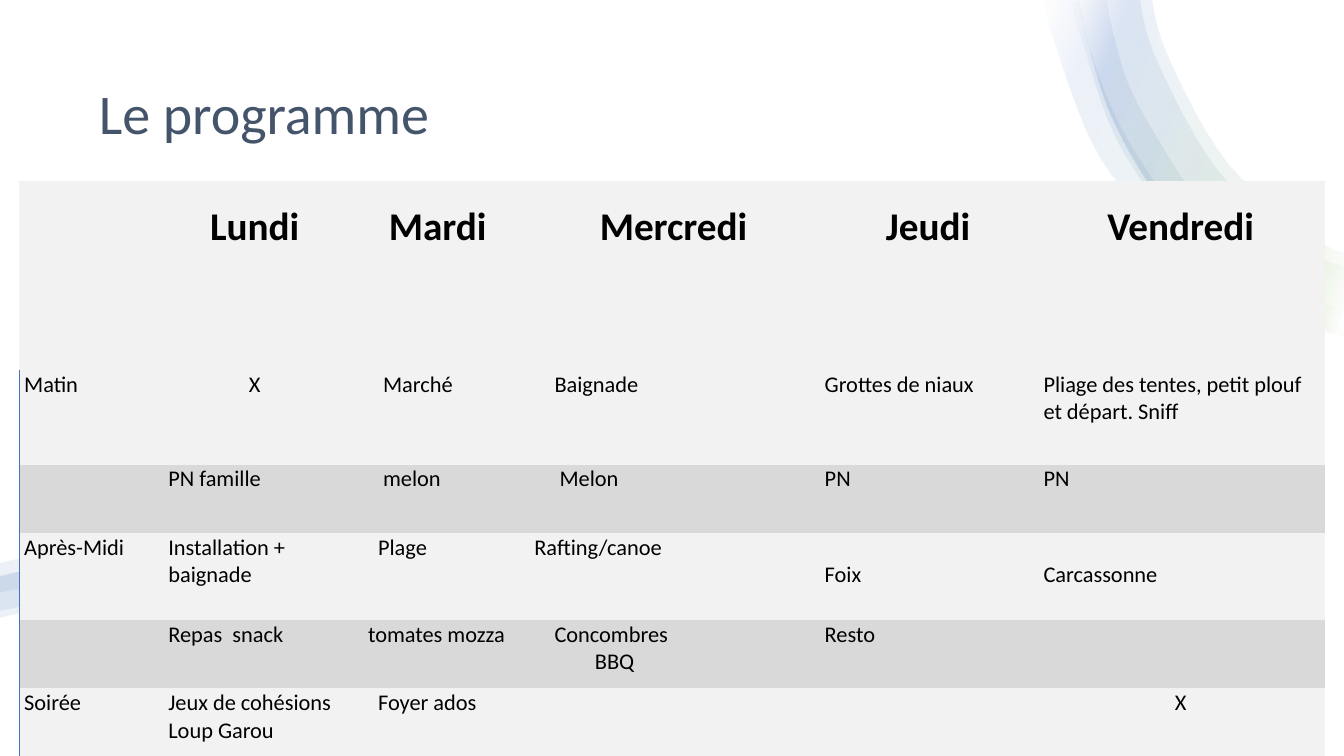
from dataclasses import dataclass

from lxml.etree import SubElement
from pptx import Presentation
from pptx.dml.color import RGBColor as RGB
from pptx.enum.text import MSO_ANCHOR as ANCHOR, PP_ALIGN as ALIGN
from pptx.oxml import parse_xml
from pptx.oxml.ns import nsdecls, qn
from pptx.util import Inches, Pt


@dataclass(frozen=True)
class Theme:
    font: str = "Calibri"
    title: str = "44546A"
    text: str = "000000"
    light: str = "F2F2F2"
    dark: str = "D9D9D9"
    border: str = "4472C4"
    title_size: int = 40
    head_size: int = 28
    body_size: int = 16
    stops: tuple = ((2, "FFFFFF"), (16, "70AD47"), (85, "4472C4"), (100, "FFFFFF"))
    opacity: int = 10


T = Theme()
TITLE = "Le programme"
DAYS = ["", "Lundi", "Mardi", "Mercredi", "Jeudi", "Vendredi"]
PROGRAMME = [
    ["Matin", "X", "Marché", "Baignade", "Grottes de niaux",
     "Pliage des tentes, petit plouf et départ. Sniff"],
    ["", "PN famille", "melon", "Melon", "PN", "PN"],
    ["Après-Midi", "Installation + baignade", "Plage", "Rafting/canoe", "Foix", "Carcassonne"],
    ["", "Repas  snack", "tomates mozza", "Concombres\nBBQ", "Resto", ""],
    ["Soirée", "Jeux de cohésions\nLoup Garou", "Foyer ados", "", "", "X"],
]
INDENTS = {"Marché": 0.3, "Baignade": 0.2, "melon": 0.3, "Melon": 0.25, "Plage": 0.25,
           "tomates mozza": 0.15, "Concombres": 0.2, "BBQ": 0.6, "Foyer ados": 0.25}
LOWERED = {"Foix", "Carcassonne"}
COLS = [1.43, 1.83, 1.8, 2.88, 2.17, 2.84]
ROWS = [0.8, 1.07, 0.94, 0.68, 0.86, 0.68, 0.81]
TABLE_AT = (0.19, 1.8)
NO_STYLE = "{2D5ABB26-0587-4C30-8999-92F81FD0307C}"

TOP_EDGE = [(13.33, 3.32), (13.09, 3.24), (12.23, 2.74), (11.52, 2), (10.99, 1.07), (10.67, -0.09)]
LOW_EDGE = [(2.63, 7.5), (2.62, 7.35), (2.36, 6.69), (1.85, 6.16), (1.17, 5.8), (0.4, 5.67), (0, 5.72)]
TOP_BANDS = [
    ([(13.33, 3.35), (12.82, 3.19), (12.21, 2.87), (11.65, 2.45), (11.16, 1.92), (10.78, 1.31),
      (10.41, 0.26), (10.36, -0.09)],
     [(10.68, -0.09), (10.82, 0.52), (11.06, 1.15), (11.4, 1.73), (11.81, 2.27), (12.3, 2.73),
      (12.86, 3.1), (13.33, 3.28)]),
    (TOP_EDGE, [(11.41, -0.09), (11.58, 0.55), (12.19, 1.64), (13.07, 2.38), (13.33, 2.51)]),
    ([(13.33, 3.33), (12.79, 3.14), (11.73, 2.33), (11.32, 1.79), (10.99, 1.19), (10.68, 0.2),
      (10.63, -0.09)],
     [(10.96, -0.09), (11.07, 0.44), (11.29, 1.04), (11.95, 2.11), (12.39, 2.55), (12.9, 2.9),
      (13.33, 3.08)]),
    (TOP_EDGE, [(11.29, -0.09), (11.47, 0.59), (12.1, 1.72), (13.01, 2.5), (13.33, 2.64)]),
]
LOW_BANDS = [
    (LOW_EDGE, [(0, 6.13), (0.4, 6.07), (1.07, 6.19), (1.66, 6.52), (2.06, 7), (2.2, 7.5)]),
    (LOW_EDGE, [(0, 6.06), (0.4, 6.01), (1.09, 6.13), (1.7, 6.47), (2.12, 6.97), (2.28, 7.5)]),
    ([(2.63, 7.5), (2.59, 7.19), (2.47, 6.85), (2.03, 6.27), (1.42, 5.87), (0.69, 5.67),
      (0.31, 5.66), (0, 5.71)],
     [(0, 5.88), (0.33, 5.84), (1.01, 5.91), (1.92, 6.39), (2.34, 6.91), (2.51, 7.5)]),
    ([(2.64, 7.5), (2.5, 6.87), (2.1, 6.23), (1.48, 5.75), (0.71, 5.53), (0.31, 5.53), (0, 5.59)],
     [(0, 5.72), (0.32, 5.68), (0.87, 5.73), (1.39, 5.91), (2, 6.31), (2.45, 6.89), (2.62, 7.5)]),
]
BANDS = [(TOP_BANDS, 200), (LOW_BANDS, 160)]


def smooth(points, steps=6):
    """Return points along a curve that passes through every given point."""
    ends = [points[0], *points, points[-1]]
    curve = [points[0]]
    for a, b, c, d in zip(ends, ends[1:], ends[2:], ends[3:]):
        for t in (i / steps for i in range(1, steps + 1)):
            curve.append(tuple(
                q + t * ((r - p) + t * ((2 * p - 5 * q + 4 * r - s) + t * (3 * q - p - 3 * r + s))) / 2
                for p, q, r, s in zip(a, b, c, d)))
    return curve


def add_band(slide, outer, inner, angle):
    """Draw one translucent curved band."""
    start, *rest = [(Inches(x), Inches(y)) for x, y in smooth(outer) + smooth(inner)]
    builder = slide.shapes.build_freeform(*start)
    builder.add_line_segments(rest, close=True)
    sp = builder.convert_to_shape()
    sp.shadow.inherit = False
    sp.line.fill.background()
    sp.fill.background()
    stops = "".join(
        f'<a:gs pos="{pos * 1000}"><a:srgbClr val="{color}">'
        f'<a:alpha val="{T.opacity * 1000}"/></a:srgbClr></a:gs>' for pos, color in T.stops)
    grad = parse_xml(f'<a:gradFill {nsdecls("a")} rotWithShape="1"><a:gsLst>{stops}</a:gsLst>'
                     f'<a:lin ang="{angle * 60000}" scaled="0"/></a:gradFill>')
    props = sp._element.spPr
    props.replace(props.find(qn("a:noFill")), grad)


def add_run(p, text, size, color, bold=False):
    """Add one formatted run to a paragraph."""
    r = p.add_run()
    r.text = text
    r.font.name, r.font.size, r.font.bold = T.font, Pt(size), bold
    r.font.color.rgb = RGB.from_string(color)


def fill_cell(cell, text, head, fill):
    """Format one table cell and write its lines."""
    cell.fill.solid()
    cell.fill.fore_color.rgb = RGB.from_string(fill)
    cell.margin_left, cell.margin_right = Inches(0.05), Inches(0.07)
    cell.margin_top = Inches(0.28 if text in LOWERED else 0.01)
    cell.margin_bottom = Inches(0.11)
    cell.vertical_anchor = ANCHOR.BOTTOM if head else ANCHOR.TOP
    if not text:
        return
    tf = cell.text_frame
    for i, line in enumerate(text.split("\n")):
        p = tf.add_paragraph() if i else tf.paragraphs[0]
        p.alignment = ALIGN.CENTER if head or line == "X" else ALIGN.LEFT
        if line in INDENTS:
            p._p.get_or_add_pPr().set("marL", str(Inches(INDENTS[line])))
        add_run(p, line, T.head_size if head else T.body_size, T.text, head)


def add_left_border(cell):
    """Draw a thin line on the left side of a cell."""
    props = cell._tc.get_or_add_tcPr()
    line = props.makeelement(qn("a:lnL"), {"w": str(Pt(1))})
    props.insert(0, line)
    SubElement(SubElement(line, qn("a:solidFill")), qn("a:srgbClr"), val=T.border)


def add_programme(slide):
    """Add the weekly timetable."""
    frame = slide.shapes.add_table(len(ROWS), len(COLS), *map(Inches, TABLE_AT),
                                   Inches(sum(COLS)), Inches(sum(ROWS)))
    table = frame.table
    table.first_row = table.horz_banding = False
    table._tbl.tblPr.find(qn("a:tableStyleId")).text = NO_STYLE
    for col, width in zip(table.columns, COLS):
        col.width = Inches(width)
    for row, height in zip(table.rows, ROWS):
        row.height = Inches(height)
    for i, texts in enumerate([DAYS, [""] * len(COLS), *PROGRAMME]):
        fill = T.dark if i in (3, 5) else T.light
        for j, text in enumerate(texts):
            fill_cell(table.cell(i, j), text, i == 0, fill)
        if i > 1:
            add_left_border(table.cell(i, 0))


def main():
    """Build and save the programme slide."""
    prs = Presentation()
    prs.slide_width, prs.slide_height = Inches(13.33), Inches(7.5)
    slide = prs.slides.add_slide(prs.slide_layouts[5])
    slide.background.fill.solid()
    slide.background.fill.fore_color.rgb = RGB.from_string("FFFFFF")
    title = slide.shapes.title
    title.left, title.top, title.width, title.height = map(Inches, (0.88, 0.5, 11.57, 1.3))
    tf = title.text_frame
    tf.vertical_anchor = ANCHOR.MIDDLE
    p = tf.paragraphs[0]
    p.alignment, p.line_spacing = ALIGN.LEFT, 0.9
    add_run(p, TITLE, T.title_size, T.title)
    for bands, angle in BANDS:
        for outer, inner in bands:
            add_band(slide, outer, inner, angle)
    add_programme(slide)
    prs.save("out.pptx")


if __name__ == "__main__":
    main()
